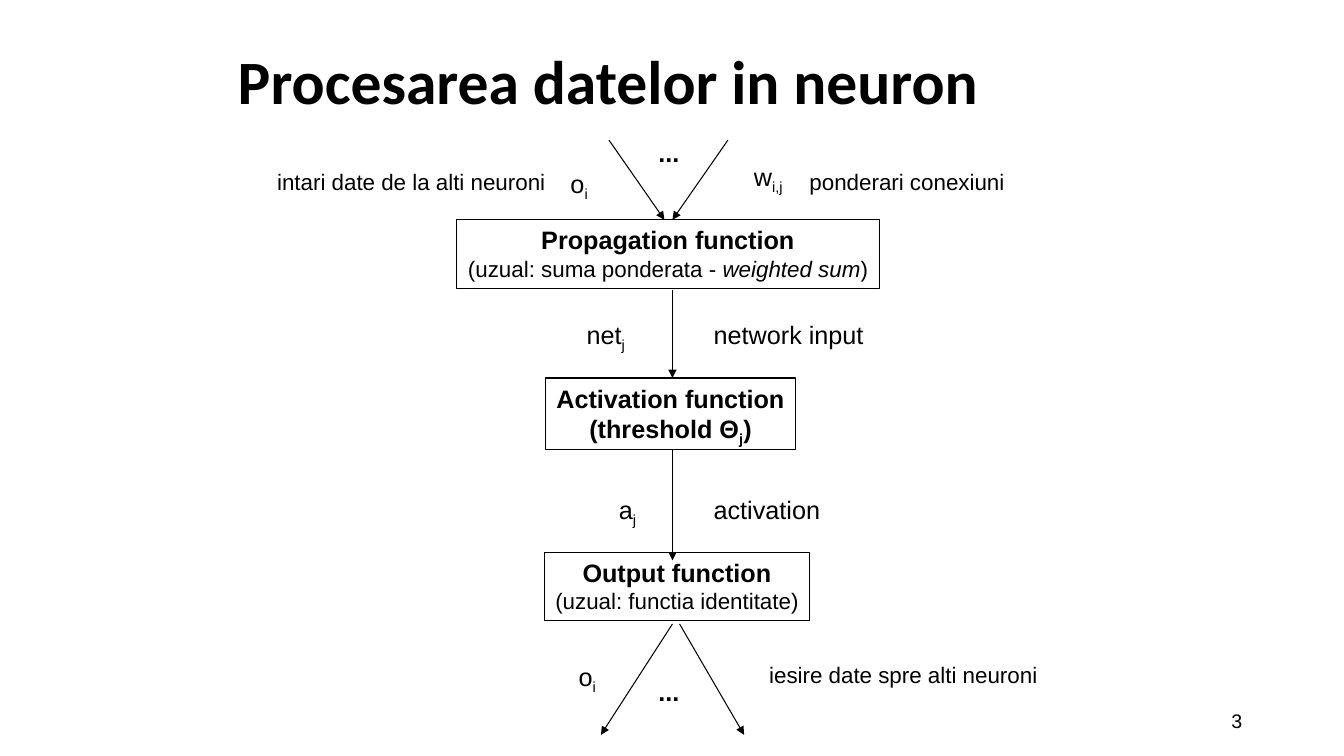
from lxml.etree import SubElement
from pptx import Presentation
from pptx.dml.color import RGBColor
from pptx.enum.shapes import MSO_CONNECTOR, MSO_SHAPE
from pptx.enum.text import MSO_ANCHOR, MSO_AUTO_SIZE, PP_ALIGN
from pptx.oxml.ns import qn
from pptx.util import Pt

SCALE = 9144
WIDE, HIGH = 1333, 750
BLACK = RGBColor(0, 0, 0)
LEFT, MID, RIGHT = PP_ALIGN.LEFT, PP_ALIGN.CENTER, PP_ALIGN.RIGHT

TITLE = ("Procesarea datelor in neuron", (226, 21, 900, 125))
NUMBER = ("3", (942, 695, 300, 40))

BOXES = [
    ((453, 218, 419, 68), [
        [("Propagation function", 18, "b")],
        [("(uzual: suma ponderata - ", 16, ""), ("weighted sum", 16, "i"), (")", 16, "")],
    ]),
    ((541, 375, 248, 71), [
        [("Activation function", 18, "b")],
        [("(threshold Θ", 18, "b"), ("j", 18, "b_"), (")", 18, "b")],
    ]),
    ((540, 548, 263, 68), [
        [("Output function", 18, "b")],
        [("(uzual: functia identitate)", 16, "")],
    ]),
]

ARROWS = [
    (604, 139, 659, 218),
    (722, 139, 667, 218),
    (667, 288, 667, 375),
    (667, 446, 667, 556),
    (667, 619, 596, 729),
    (674, 619, 738, 729),
]

SYMBOLS = [
    ("o", "i", (556, 162, 38, 40)),
    ("w", "i,j", (738, 155, 50, 40)),
    ("net", "j", (572, 312, 59, 40)),
    ("a", "j", (604, 485, 38, 40)),
    ("o", "i", (564, 651, 38, 40)),
]

NOTES = [
    ("intari date de la alti neuroni", 16, (265, 162, 287, 37)),
    ("ponderari conexiuni", 16, (793, 162, 214, 37)),
    ("network input", 18, (698, 312, 169, 40)),
    ("activation", 18, (698, 485, 126, 40)),
    ("iesire date spre alti neuroni", 16, (753, 651, 289, 37)),
]

DOTS = [(643, 131, 41, 40), (643, 666, 41, 40)]


def emu(spot):
    return [n * SCALE for n in spot]


def write(shape, lines, align=LEFT, face="Arial"):
    frame = shape.text_frame
    frame.word_wrap = False
    frame.auto_size = MSO_AUTO_SIZE.SHAPE_TO_FIT_TEXT
    frame.vertical_anchor = MSO_ANCHOR.TOP
    for i, line in enumerate(lines):
        para = frame.add_paragraph() if i else frame.paragraphs[0]
        para.alignment = align
        for text, size, style in line:
            run = para.add_run()
            run.text = text
            font = run.font
            font.name, font.size = face, Pt(size)
            font.bold, font.italic = "b" in style, "i" in style
            font.color.rgb = BLACK
            if "_" in style:
                run._r.get_or_add_rPr().set("baseline", "-25000")
    return frame


def label(slide, spot, line, align=LEFT, face="Arial"):
    return write(slide.shapes.add_textbox(*emu(spot)), [line], align, face)


def fix(frame):
    frame.word_wrap = True
    frame.auto_size = MSO_AUTO_SIZE.NONE
    frame.vertical_anchor = MSO_ANCHOR.MIDDLE


def box(slide, spot, lines):
    shape = slide.shapes.add_shape(MSO_SHAPE.RECTANGLE, *emu(spot))
    shape.shadow.inherit = False
    shape.fill.background()
    shape.line.color.rgb = BLACK
    shape.line.width = Pt(0.75)
    write(shape, lines, MID)


def arrow(slide, ends):
    link = slide.shapes.add_connector(MSO_CONNECTOR.STRAIGHT, *emu(ends))
    link.line.color.rgb = BLACK
    link.line.width = Pt(0.75)
    SubElement(link.line._get_or_add_ln(), qn("a:tailEnd"), type="triangle")
    SubElement(link._element.spPr, qn("a:effectLst"))


def main():
    deck = Presentation()
    deck.slide_width, deck.slide_height = emu((WIDE, HIGH))
    slide = deck.slides.add_slide(deck.slide_layouts[6])
    text, spot = NUMBER
    fix(label(slide, spot, [(text, 14, "")], RIGHT))
    text, spot = TITLE
    head = label(slide, spot, [(text, 44, "b")], face="Calibri")
    fix(head)
    head.paragraphs[0].line_spacing = 0.9
    for spot, lines in BOXES:
        box(slide, spot, lines)
    for ends in ARROWS:
        arrow(slide, ends)
    for base, sub, spot in SYMBOLS:
        label(slide, spot, [(base, 18, ""), (sub, 18, "_")])
    for text, size, spot in NOTES:
        label(slide, spot, [(text, size, "")])
    for spot in DOTS:
        label(slide, spot, [("...", 18, "b")], MID)
    deck.save("out.pptx")


if __name__ == "__main__":
    main()
